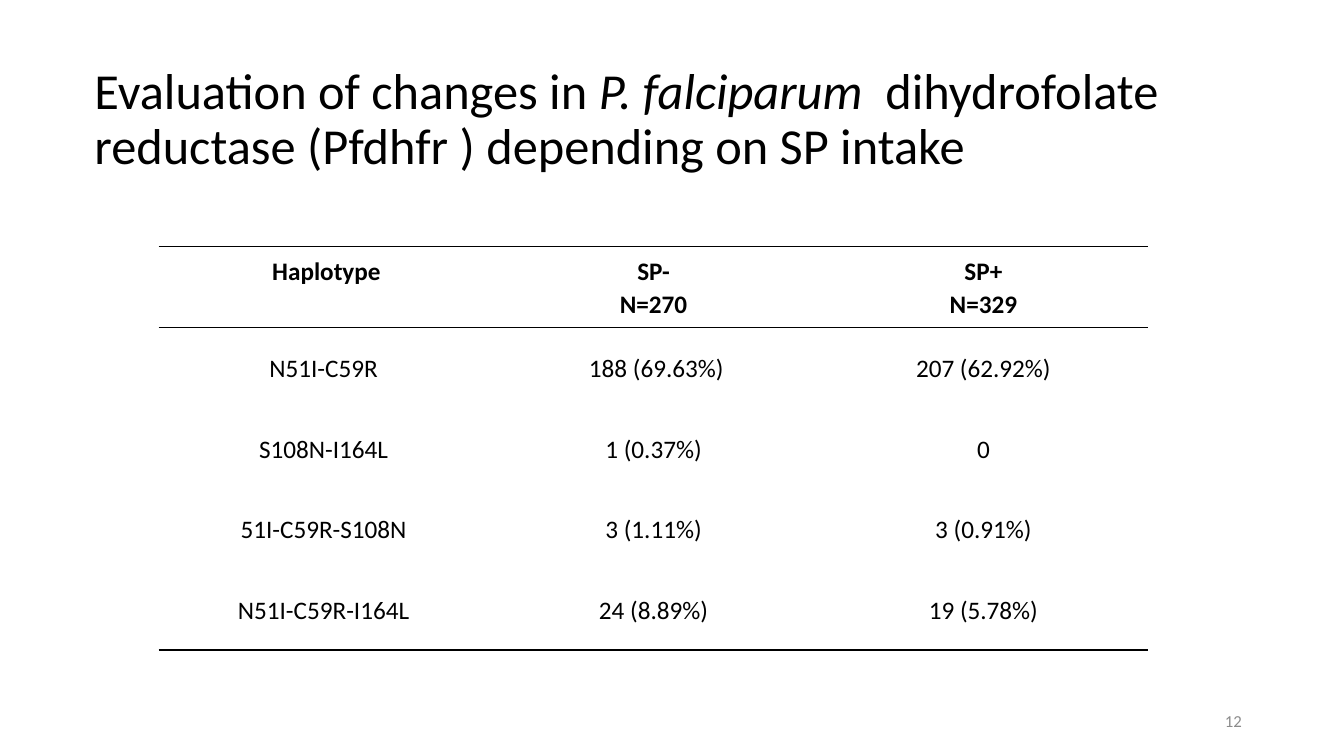
import pptx
import pptx.dml.color
import pptx.enum.text
import pptx.oxml.ns
import pptx.util
from lxml import etree

Cm, Pt = pptx.util.Cm, pptx.util.Pt
RGBColor = pptx.dml.color.RGBColor
ALIGN = pptx.enum.text.PP_ALIGN
ANCHOR = pptx.enum.text.MSO_ANCHOR

BLACK = RGBColor(0x00, 0x00, 0x00)
GREY = RGBColor(0x8C, 0x8C, 0x8C)
FONT = "Calibri"

TITLE = [
    ("Evaluation of changes in ", False),
    ("P. falciparum ", True),
    (" dihydrofolate reductase (Pfdhfr ) depending on SP intake", False),
]
ROWS = [
    [" Haplotype", "SP-\nN=270", "SP+\nN=329"],
    ["N51I-C59R", " 188 (69.63%)", "207 (62.92%)"],
    ["S108N-I164L", "1 (0.37%)", "0"],
    ["51I-C59R-S108N", "3 (1.11%)", "3 (0.91%)"],
    ["N51I-C59R-I164L", "24 (8.89%)", "19 (5.78%)"],
]


def style(para, size, color, align, bold=False):
    para.alignment = align
    font = para.font
    font.name, font.size, font.bold = FONT, Pt(size), bold
    font.color.rgb = color


def add_text(slide, box, runs, size, color, align):
    frame = slide.shapes.add_textbox(*box).text_frame
    frame.word_wrap = True
    frame.vertical_anchor = ANCHOR.MIDDLE
    para = frame.paragraphs[0]
    style(para, size, color, align)
    for text, slant in runs:
        run = para.add_run()
        run.text = text
        run.font.italic = slant
    return para


def set_lines(cell, sides):
    """Rule the named sides in black and clear the others."""
    qn = pptx.oxml.ns.qn
    props = cell._tc.get_or_add_tcPr()
    for side in "LRTB":
        line = etree.SubElement(props, qn("a:ln" + side), w=str(Pt(1)))
        if side in sides:
            fill = etree.SubElement(line, qn("a:solidFill"))
            etree.SubElement(fill, qn("a:srgbClr"), val=str(BLACK))
        else:
            etree.SubElement(line, qn("a:noFill"))


def add_title(slide, box):
    para = add_text(slide, box, TITLE, 36, BLACK, ALIGN.LEFT)
    para.line_spacing = 0.9


def add_grid(slide, box):
    table = slide.shapes.add_table(len(ROWS), len(ROWS[0]), *box).table
    table.first_row = table.horz_banding = False
    # Rules above and below the header, and below the last row
    rules = {0: "TB", 1: "T", len(ROWS) - 1: "B"}
    for i, row in enumerate(ROWS):
        head = i == 0
        for j, text in enumerate(row):
            cell = table.cell(i, j)
            set_lines(cell, rules.get(i, ""))
            cell.fill.background()
            cell.margin_left = cell.margin_right = Cm(0.1)
            cell.margin_top = Cm(0.18) if head else 0
            cell.margin_bottom = 0
            cell.vertical_anchor = ANCHOR.TOP if head else ANCHOR.MIDDLE
            cell.text = text
            for para in cell.text_frame.paragraphs:
                style(para, 18, BLACK, ALIGN.CENTER, head)
                para.line_spacing = 1.07


def add_number(slide, box):
    add_text(slide, box, [("12", False)], 12, GREY, ALIGN.RIGHT)


def main():
    deck = pptx.Presentation()
    deck.slide_width, deck.slide_height = Cm(33.87), Cm(19.05)
    slide = deck.slides.add_slide(deck.slide_layouts[6])
    add_title(slide, (Cm(2.13), Cm(2.03), Cm(29.21), Cm(2.03)))
    add_grid(slide, (Cm(4), Cm(6.22), Cm(24.94), Cm(10.16)))
    add_number(slide, (Cm(23.93), Cm(17.65), Cm(7.62), Cm(1.02)))
    deck.save("out.pptx")


if __name__ == "__main__":
    main()
